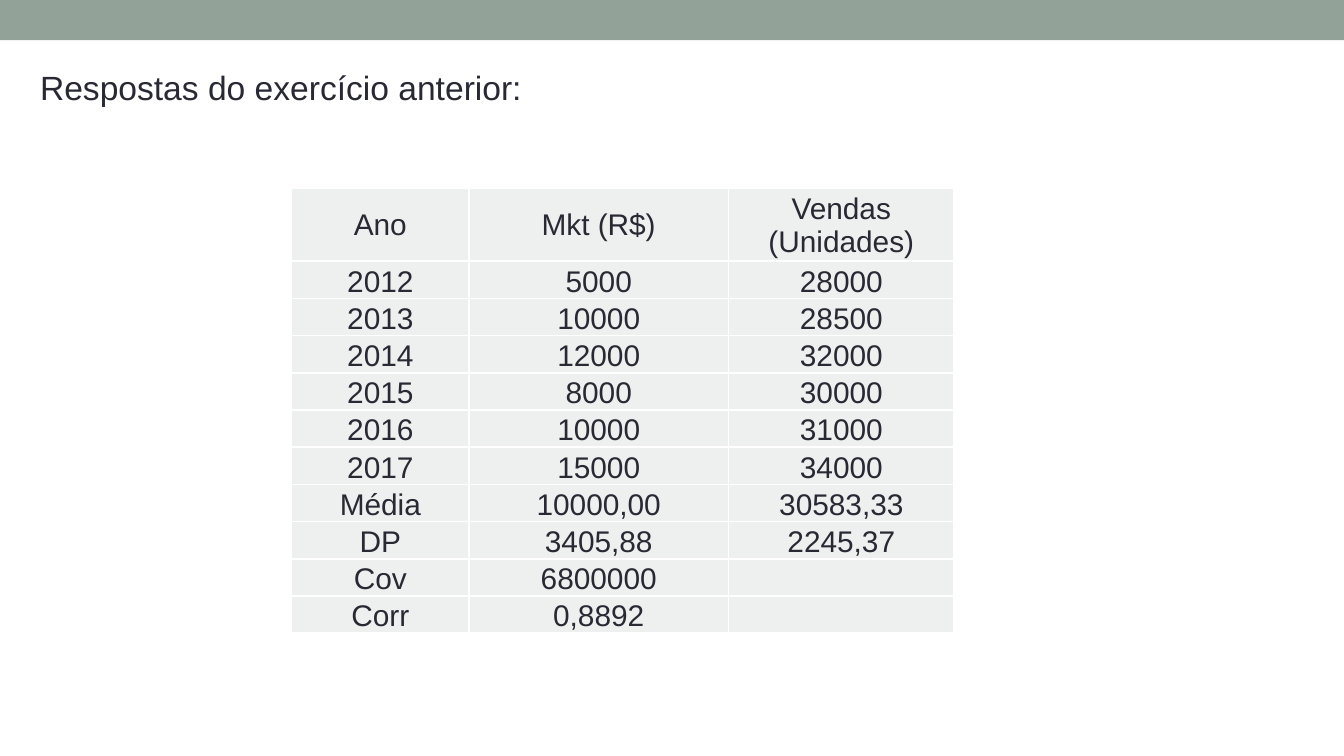
from dataclasses import dataclass

from lxml import etree
from pptx import Presentation
from pptx.dml.color import RGBColor
from pptx.enum.shapes import MSO_SHAPE
from pptx.enum.text import MSO_ANCHOR, MSO_AUTO_SIZE, PP_ALIGN
from pptx.oxml.ns import qn
from pptx.util import Inches, Pt

RECT = MSO_SHAPE.RECTANGLE
CENTER = PP_ALIGN.CENTER
MIDDLE, BOTTOM = MSO_ANCHOR.MIDDLE, MSO_ANCHOR.BOTTOM
GROW = MSO_AUTO_SIZE.SHAPE_TO_FIT_TEXT

ROWS = [
    ("Ano", "Mkt (R$)", "Vendas (Unidades)"),
    ("2012", "5000", "28000"),
    ("2013", "10000", "28500"),
    ("2014", "12000", "32000"),
    ("2015", "8000", "30000"),
    ("2016", "10000", "31000"),
    ("2017", "15000", "34000"),
    ("Média", "10000,00", "30583,33"),
    ("DP", "3405,88", "2245,37"),
    ("Cov", "6800000", ""),
    ("Corr", "0,8892", ""),
]


@dataclass(frozen=True)
class Theme:
    font: str = "Arial"
    ink: str = "292934"
    band: str = "93A299"
    cell: str = "EEF0EF"
    border: str = "FFFFFF"
    title_size: int = 18
    cell_size: int = 16
    border_width: int = 1


class Deck:
    """Draws styled elements on a 16:9 slide, on a square grid 100 columns wide."""

    def __init__(self, theme):
        self.theme = theme
        self.prs = Presentation()
        self.prs.slide_width = Inches(10)
        self.prs.slide_height = Inches(10) * 9 // 16
        self.s = self.prs.slides.add_slide(self.prs.slide_layouts[6])

    def units(self, *counts):
        return [Inches(n / 10) for n in counts]

    def run(self, p, text, size):
        r = p.add_run()
        r.text = text
        r.font.name, r.font.size = self.theme.font, Pt(size)
        r.font.color.rgb = RGBColor.from_string(self.theme.ink)

    def band(self, *box):
        sp = self.s.shapes.add_shape(RECT, *self.units(*box))
        sp.shadow.inherit = False
        sp.fill.solid()
        sp.fill.fore_color.rgb = RGBColor.from_string(self.theme.band)
        sp.line.fill.background()

    def title(self, text, *box):
        tf = self.s.shapes.add_textbox(*self.units(*box)).text_frame
        tf.word_wrap, tf.auto_size = True, GROW
        self.run(tf.paragraphs[0], text, self.theme.title_size)

    def borders(self, cell):
        tc_pr = cell._tc.get_or_add_tcPr()
        for i, side in enumerate(("lnL", "lnR", "lnT", "lnB")):
            ln = etree.Element(qn(f"a:{side}"), w=str(int(Pt(self.theme.border_width))))
            fill = etree.SubElement(ln, qn("a:solidFill"))
            etree.SubElement(fill, qn("a:srgbClr"), val=self.theme.border)
            tc_pr.insert(i, ln)

    def cell(self, cell, text, anchor):
        cell.fill.solid()
        cell.fill.fore_color.rgb = RGBColor.from_string(self.theme.cell)
        cell.vertical_anchor = anchor
        cell.margin_left = cell.margin_right = cell.margin_top = Inches(0.01)
        cell.margin_bottom = 0
        self.borders(cell)
        p = cell.text_frame.paragraphs[0]
        p.alignment = CENTER
        size = self.theme.cell_size
        if text:
            self.run(p, text, size)
        else:
            etree.SubElement(p._p, qn("a:endParaRPr"), sz=str(size * 100))

    def table(self, rows, left, top, widths, height, header):
        box = self.units(left, top, sum(widths), height)
        tbl = self.s.shapes.add_table(len(rows), len(widths), *box).table
        tbl.first_row = tbl.horz_banding = False
        for column, width in zip(tbl.columns, self.units(*widths)):
            column.width = width
        body = (height - header) / (len(rows) - 1)
        for i, texts in enumerate(rows):
            tbl.rows[i].height = self.units(body if i else header)[0]
            for j, text in enumerate(texts):
                self.cell(tbl.cell(i, j), text, BOTTOM if i else MIDDLE)


def main():
    deck = Deck(Theme())
    deck.band(0, 0, 100, 3)
    deck.title("Respostas do exercício anterior:", 2, 4.5, 58.3, 4)
    deck.table(ROWS, 21.7, 14, (13.2, 19.3, 16.8), height=33.1, header=5.4)
    deck.prs.save("out.pptx")


if __name__ == "__main__":
    main()
